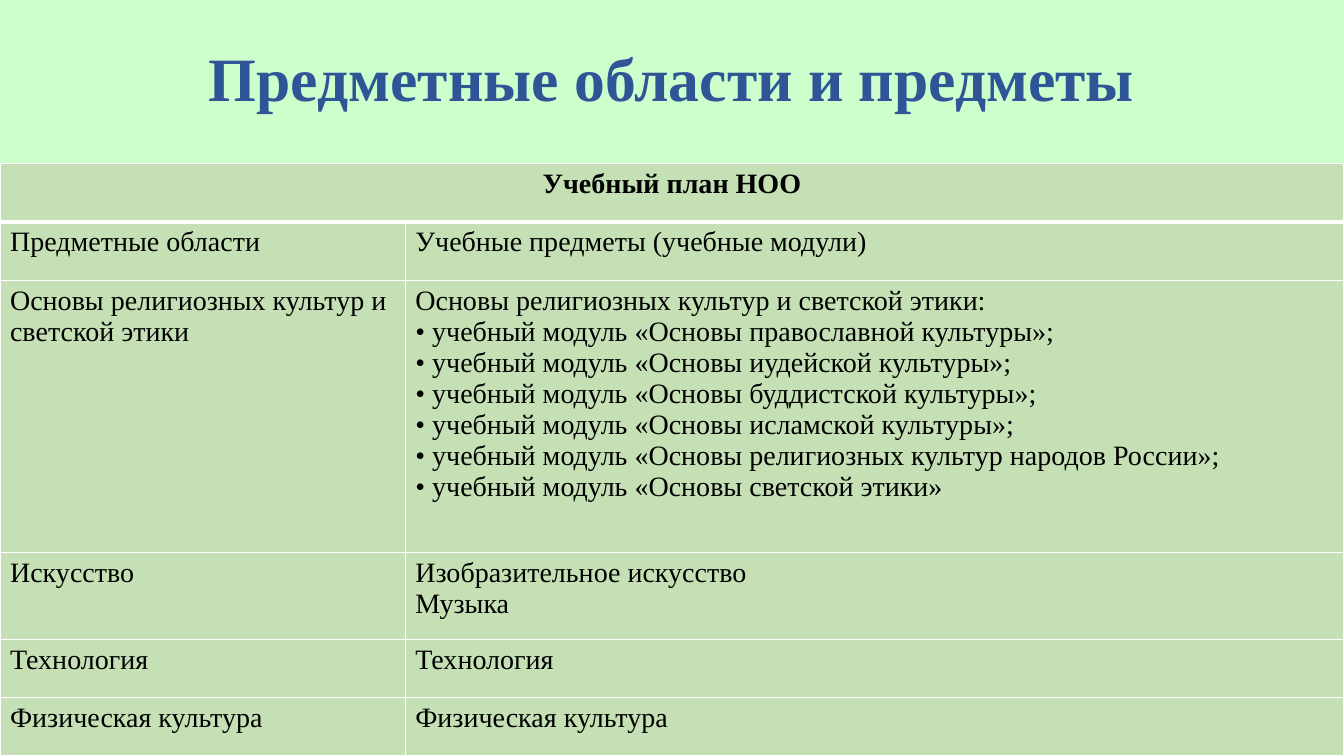
from lxml.etree import SubElement
from pptx import Presentation
from pptx.dml.color import RGBColor
from pptx.enum.shapes import MSO_SHAPE
from pptx.enum.text import MSO_ANCHOR, PP_ALIGN
from pptx.oxml import parse_xml
from pptx.oxml.ns import nsdecls, qn
from pptx.util import Pt

COLORS = {"band": "CCFFCC", "title": "2F5597", "cell": "C5E0B4", "text": "000000", "border": "FFFFFF"}
FONT = "Times New Roman"
SLIDE_WIDTH, SLIDE_HEIGHT, TITLE_HEIGHT = 960, 540, 116.8
COLUMN_WIDTHS = [289.5, 670.5]
ROW_HEIGHTS = [41.7, 41.7, 194.3, 62.1, 41.7, 41.7]
BULLET_INDENT = 12
HEADING = "Учебный план НОО"
MODULES = [
    "Основы православной культуры»;",
    "Основы иудейской культуры»;",
    "Основы буддистской культуры»;",
    "Основы исламской культуры»;",
    "Основы религиозных культур народов России»;",
    "Основы светской этики»",
]
SUBJECT_ROWS = [
    ("Предметные области", ["Учебные предметы (учебные модули)"], []),
    (
        "Основы религиозных культур и светской этики",
        ["Основы религиозных культур и светской этики:"],
        [f"учебный модуль «{module}" for module in MODULES],
    ),
    ("Искусство", ["Изобразительное искусство", "Музыка"], []),
    ("Технология", ["Технология"], []),
    ("Физическая культура", ["Физическая культура"], []),
]


def color(name):
    return RGBColor.from_string(COLORS[name])


def write(paragraph, text, size=20, fill="text", bold=False, align=PP_ALIGN.LEFT, spacing=1.0, bullet=False):
    paragraph.alignment = align
    paragraph.line_spacing = spacing
    run = paragraph.add_run()
    run.text = text
    run.font.name = FONT
    run.font.size = Pt(size)
    run.font.bold = bold
    run.font.color.rgb = color(fill)
    if bullet:
        properties = paragraph._p.get_or_add_pPr()
        properties.set("marL", str(Pt(BULLET_INDENT)))
        properties.set("indent", str(-Pt(BULLET_INDENT)))
        SubElement(properties, qn("a:buFont"), typeface=FONT)
        SubElement(properties, qn("a:buChar"), char="•")


def fill_cell(cell, lines, bullets=(), **text_format):
    frame = cell.text_frame
    items = [(line, False) for line in lines] + [(line, True) for line in bullets]
    for index, (line, bullet) in enumerate(items):
        paragraph = frame.add_paragraph() if index else frame.paragraphs[0]
        write(paragraph, line, bullet=bullet, **text_format)


def style_cell(cell, top, bottom):
    cell.fill.solid()
    cell.fill.fore_color.rgb = color("cell")
    properties = cell._tc.get_or_add_tcPr()
    for index, (side, width) in enumerate([("L", 1), ("R", 1), ("T", top), ("B", bottom)]):
        line = parse_xml(
            f'<a:ln{side} {nsdecls("a")} w="{Pt(width)}"><a:solidFill>'
            f'<a:srgbClr val="{COLORS["border"]}"/></a:solidFill></a:ln{side}>'
        )
        properties.insert(index, line)


def add_title(slide, left, top, width, height):
    shape = slide.shapes.add_shape(MSO_SHAPE.RECTANGLE, Pt(left), Pt(top), Pt(width), Pt(height))
    shape.shadow.inherit = False
    shape.fill.solid()
    shape.fill.fore_color.rgb = color("band")
    shape.line.fill.background()
    frame = shape.text_frame
    frame.word_wrap = True
    frame.vertical_anchor = MSO_ANCHOR.MIDDLE
    write(frame.paragraphs[0], "Предметные области и предметы",
          size=44, fill="title", bold=True, align=PP_ALIGN.CENTER, spacing=0.9)


def add_curriculum(slide, left, top, width, height):
    table = slide.shapes.add_table(
        len(ROW_HEIGHTS), len(COLUMN_WIDTHS), Pt(left), Pt(top), Pt(width), Pt(height)
    ).table
    for column, column_width in zip(table.columns, COLUMN_WIDTHS):
        column.width = Pt(column_width)
    for index, (row, row_height) in enumerate(zip(table.rows, ROW_HEIGHTS)):
        row.height = Pt(row_height)
        for cell in row.cells:
            style_cell(cell, top=3 if index == 1 else 1, bottom=3 if index == 0 else 1)
    table.cell(0, 0).merge(table.cell(0, 1))
    fill_cell(table.cell(0, 0), [HEADING], bold=True, align=PP_ALIGN.CENTER)
    for index, (area, subjects, modules) in enumerate(SUBJECT_ROWS, start=1):
        fill_cell(table.cell(index, 0), [area])
        fill_cell(table.cell(index, 1), subjects, modules)


def main():
    presentation = Presentation()
    presentation.slide_width = Pt(SLIDE_WIDTH)
    presentation.slide_height = Pt(SLIDE_HEIGHT)
    slide = presentation.slides.add_slide(presentation.slide_layouts[6])
    add_title(slide, 0, 0, SLIDE_WIDTH, TITLE_HEIGHT)
    add_curriculum(slide, 0, TITLE_HEIGHT, SLIDE_WIDTH, SLIDE_HEIGHT - TITLE_HEIGHT)
    presentation.save("out.pptx")


if __name__ == "__main__":
    main()
